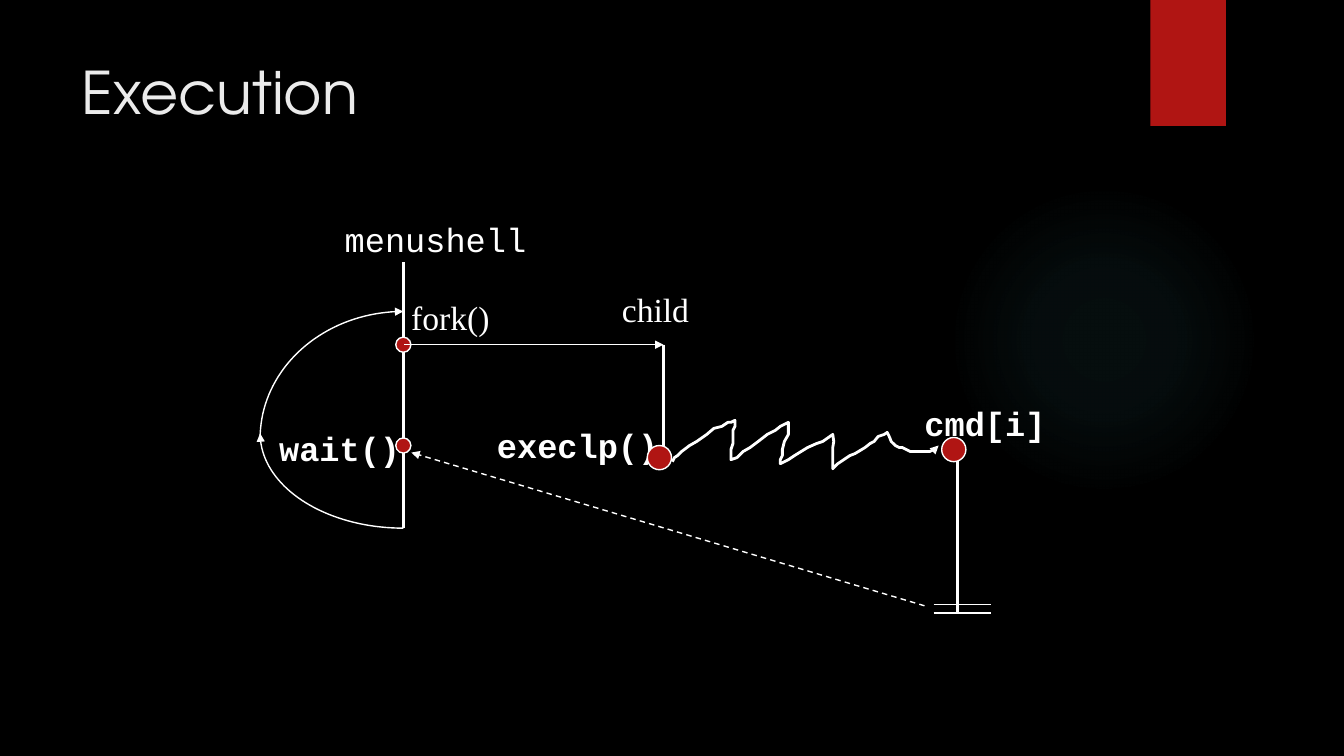
import math
from lxml import etree
from pptx import Presentation
from pptx.dml.color import RGBColor
from pptx.enum.dml import MSO_LINE
from pptx.enum.shapes import MSO_CONNECTOR, MSO_SHAPE
from pptx.enum.text import MSO_ANCHOR
from pptx.oxml import parse_xml
from pptx.oxml.ns import qn
from pptx.util import Inches, Pt

RECT, OVAL = MSO_SHAPE.RECTANGLE, MSO_SHAPE.OVAL
STRAIGHT = MSO_CONNECTOR.STRAIGHT
DASH = MSO_LINE.DASH
TOP = MSO_ANCHOR.TOP

BLACK, WHITE, RED, TITLE, GLOW = "000000", "FFFFFF", "B01513", "EBEBEB", "50B9C1"
MONO, SERIF, HEADING = "Courier New", "Times New Roman", "TeX Gyre Adventor"
DRAWING_NS = "http://schemas.openxmlformats.org/drawingml/2006/main"

ZIGZAG = [
    (0, 41), (2, 37), (5, 35), (9, 31), (17, 25), (24, 21), (34, 14), (41, 8),
    (49, 6), (55, 2), (58, 2), (62, 0), (62, 6), (60, 10), (60, 23), (58, 29),
    (58, 39), (64, 37), (70, 31), (77, 27), (85, 21), (94, 14), (102, 10),
    (107, 6), (115, 2), (115, 14), (111, 21), (109, 29), (109, 35), (107, 39),
    (107, 43), (111, 41), (115, 39), (121, 35), (134, 27), (143, 23), (149, 21),
    (159, 14), (160, 21), (159, 27), (159, 48), (164, 43), (170, 39), (176, 35),
    (181, 33), (191, 27), (196, 23), (200, 21), (204, 16), (210, 14), (213, 12),
    (215, 16), (217, 21), (221, 25), (225, 27), (228, 27), (232, 29), (236, 31),
    (255, 31), (259, 29), (263, 27), (266, 27), (264, 25),
]


def color(value):
    return RGBColor.from_string(value)


def add_text(s, text, x, y, w, h, font=MONO, size=24, fill=WHITE, bold=False, wrap=False):
    tf = s.shapes.add_textbox(Inches(x), Inches(y), Inches(w), Inches(h)).text_frame
    tf.word_wrap = wrap
    tf.vertical_anchor = TOP
    r = tf.paragraphs[0].add_run()
    r.text = text
    r.font.name = font
    r.font.size = Pt(size)
    r.font.bold = bold
    r.font.color.rgb = color(fill)


def style_line(sp, width, arrow=False, dash=None):
    sp.line.color.rgb = color(WHITE)
    sp.line.width = Pt(width)
    if dash:
        sp.line.dash_style = dash
    if arrow:
        ln = sp.line._get_or_add_ln()
        etree.SubElement(ln, qn("a:tailEnd"), type="triangle")


def add_line(s, x1, y1, x2, y2, width=1, **kwargs):
    c = s.shapes.add_connector(STRAIGHT, Inches(x1), Inches(y1), Inches(x2), Inches(y2))
    style_line(c, width, **kwargs)
    etree.SubElement(c._element.spPr, qn("a:effectLst"))


def add_curve(s, points, width):
    points = [(Inches(x), Inches(y)) for x, y in points]
    builder = s.shapes.build_freeform(*points[0])
    builder.add_line_segments(points[1:], close=False)
    sp = builder.convert_to_shape()
    sp.shadow.inherit = False
    sp.fill.background()
    style_line(sp, width, arrow=True)


def add_quarter(s, cx, cy, rx, ry, start):
    angles = [math.radians(start + 90 * i / 40) for i in range(41)]
    add_curve(s, [(cx + rx * math.cos(a), cy + ry * math.sin(a)) for a in angles], 1)


def add_dot(s, cx, cy, size):
    sp = s.shapes.add_shape(OVAL, Inches(cx - size / 2), Inches(cy - size / 2),
                            Inches(size), Inches(size))
    sp.shadow.inherit = False
    sp.fill.solid()
    sp.fill.fore_color.rgb = color(RED)
    style_line(sp, 1)


def draw_backdrop(s):
    s.background.fill.solid()
    s.background.fill.fore_color.rgb = color(BLACK)
    glow = s.shapes.add_shape(OVAL, Inches(9.41), Inches(1.83), Inches(3.08), Inches(3.08))
    glow.shadow.inherit = False
    glow.line.fill.background()
    glow.fill.background()
    stops = "".join(
        f'<a:gs pos="{pos * 1000}"><a:srgbClr val="{GLOW}">'
        f'<a:alpha val="{alpha * 1000}"/></a:srgbClr></a:gs>'
        for pos, alpha in ((0, 7), (36, 6), (69, 0), (100, 0)))
    gradient = parse_xml(
        f'<a:gradFill xmlns:a="{DRAWING_NS}" rotWithShape="1"><a:gsLst>{stops}</a:gsLst>'
        '<a:path path="circle"><a:fillToRect l="50000" t="50000" r="50000" b="50000"/>'
        '</a:path></a:gradFill>')
    sp_pr = glow._element.spPr
    sp_pr.replace(sp_pr.find(qn("a:noFill")), gradient)
    tab = s.shapes.add_shape(RECT, Inches(11.41), 0, Inches(0.75), Inches(1.25))
    tab.shadow.inherit = False
    tab.fill.solid()
    tab.fill.fore_color.rgb = color(RED)
    tab.line.fill.background()


def draw_parent(s, x, y):
    add_text(s, "menushell", x - 0.68, y - 0.48, 2.01, 0.5)
    add_line(s, x, y, x, y + 2.64, 2)
    add_quarter(s, x, y + 1.7, 1.42, 0.94, 90)
    add_quarter(s, x, y + 1.75, 1.42, 1.26, 180)
    add_text(s, "fork()", x - 0.02, y + 0.3, 0.99, 0.5, font=SERIF)
    add_text(s, "wait()", x - 1.33, y + 1.6, 1.41, 0.5, bold=True)
    for dy in (0.82, 1.82):
        add_dot(s, x, y + dy, 0.15)


def draw_child(s, x, y):
    add_text(s, "child", x - 0.51, y - 0.6, 0.87, 0.5, font=SERIF)
    add_text(s, "execlp()", x - 1.75, y + 0.75, 1.81, 0.5, bold=True)
    add_line(s, x, y, x, y + 1.07, 2)
    add_curve(s, [(x + 0.09 + dx / 100, y + 0.75 + dy / 100) for dx, dy in ZIGZAG], 2)
    add_dot(s, x - 0.04, y + 1.12, 0.24)


def draw_command(s, x, y):
    add_text(s, "cmd[i]", x - 0.43, y - 0.56, 1.41, 0.5, bold=True)
    add_line(s, x, y, x, y + 1.56, 2)
    add_dot(s, x - 0.04, y - 0.05, 0.24)
    for dy in (1.49, 1.57):
        add_line(s, x - 0.24, y + dy, x + 0.33, y + dy)


def draw_execution(s, x, y):
    child_x, child_y = x + 2.58, y + 0.82
    command_x, command_y = x + 5.5, y + 1.91
    draw_child(s, child_x, child_y)
    draw_command(s, command_x, command_y)
    draw_parent(s, x, y)
    add_line(s, x + 0.01, child_y, child_x, child_y, arrow=True)
    add_line(s, command_x - 0.33, command_y + 1.5, x + 0.08, y + 1.89, arrow=True, dash=DASH)


def main():
    prs = Presentation()
    prs.slide_width, prs.slide_height = Inches(13.33), Inches(7.5)
    s = prs.slides.add_slide(prs.slide_layouts[6])
    draw_backdrop(s)
    add_text(s, "Execution", 0.71, 0.5, 10.29, 1.53, font=HEADING, size=42, fill=TITLE, wrap=True)
    draw_execution(s, 4, 2.6)
    prs.save("out.pptx")


if __name__ == "__main__":
    main()
